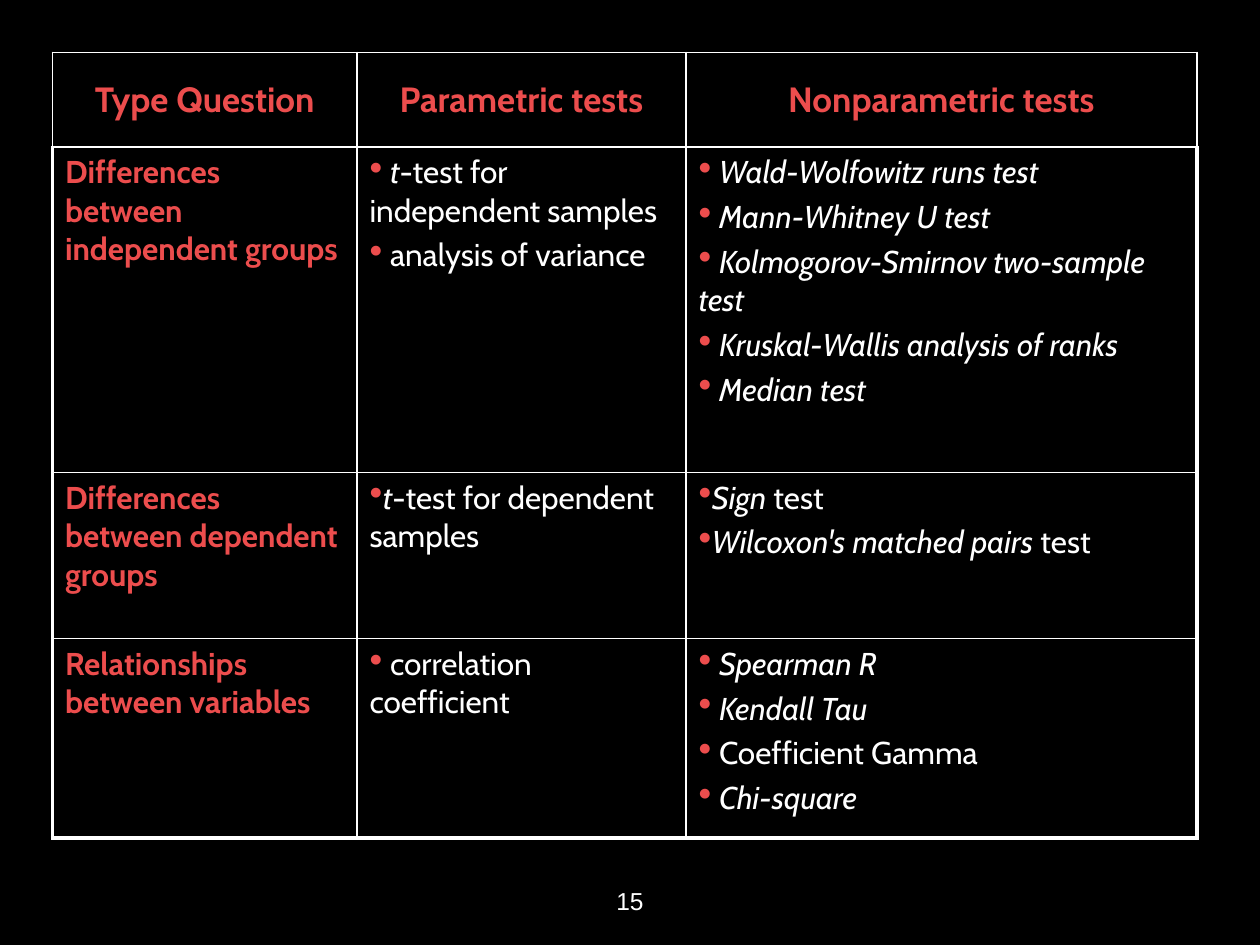
from lxml import etree
from pptx import Presentation
from pptx.dml.color import RGBColor
from pptx.enum.text import MSO_ANCHOR, PP_ALIGN
from pptx.oxml.ns import qn
from pptx.util import Pt

CENTER, LEFT = PP_ALIGN.CENTER, PP_ALIGN.LEFT
MIDDLE, TOP = MSO_ANCHOR.MIDDLE, MSO_ANCHOR.TOP
BLACK, WHITE, RED = "000000", "FFFFFF", "EC4D4D"
THIN, THICK = 1, 2.25
COLUMN_WIDTHS = [174, 188, 292]
ROW_HEIGHTS = [54, 186, 95, 114]
HEADERS = ["Type Question", "Parametric tests", "Nonparametric tests"]
# Each bullet is a list of (text, italic) spans.
QUESTIONS = [
    ("Differences between independent groups",
     [[(" t", True), ("-test for independent samples", False)],
      [(" analysis of variance", False)]],
     [[(" Wald-Wolfowitz runs test", True)],
      [(" Mann-Whitney U test", True)],
      [(" Kolmogorov-Smirnov two-sample test", True)],
      [(" Kruskal-Wallis analysis of ranks", True)],
      [(" Median test", True)]]),
    ("Differences between dependent groups",
     [[("t", True), ("-test for dependent samples", False)]],
     [[("Sign", True), (" test", False)],
      [("Wilcoxon's matched pairs", True), (" test", False)]]),
    ("Relationships between variables",
     [[(" correlation coefficient", False)]],
     [[(" Spearman R", True)],
      [(" Kendall Tau", True)],
      [(" Coefficient Gamma", False)],
      [(" Chi-square", True)]]),
]


def color(value):
    return RGBColor.from_string(value)


class SlideWriter:
    """Holds the style and the current slide, and adds elements to it."""

    def __init__(self, slide, font="Cabin", size=18):
        self.slide, self.font, self.size = slide, font, size
        fill = slide.background.fill
        fill.solid()
        fill.fore_color.rgb = color(BLACK)

    def span(self, para, text, ink=WHITE, size=None, font=None, bold=False, italic=False):
        span = para.add_run()
        span.text = text
        span.font.name = font or self.font
        span.font.size = Pt(size or self.size)
        span.font.bold, span.font.italic = bold, italic
        span.font.color.rgb = color(ink)

    def bullet(self, para):
        properties = para._p.get_or_add_pPr()
        properties.set("marL", "0")
        properties.set("indent", "0")
        tint = etree.SubElement(properties, qn("a:buClr"))
        etree.SubElement(tint, qn("a:srgbClr"), val=RED)
        etree.SubElement(properties, qn("a:buSzPct"), val="120000")
        etree.SubElement(properties, qn("a:buChar"), char="•")

    def bullets(self, cell, items):
        for index, spans in enumerate(items):
            frame = cell.text_frame
            para = frame.add_paragraph() if index else frame.paragraphs[0]
            self.bullet(para)
            if index:
                para.space_before = Pt(3.6)
            for text, italic in spans:
                self.span(para, text, italic=italic)

    def heading(self, cell, text, size=None, align=LEFT, anchor=TOP):
        cell.vertical_anchor = anchor
        para = cell.text_frame.paragraphs[0]
        para.alignment = align
        self.span(para, text, RED, size, bold=True)

    def borders(self, cell, widths):
        properties = cell._tc.get_or_add_tcPr()
        for index, (side, width) in enumerate(zip("LRTB", widths)):
            line = etree.Element(qn(f"a:ln{side}"), w=str(Pt(width)))
            fill = etree.SubElement(line, qn("a:solidFill"))
            etree.SubElement(fill, qn("a:srgbClr"), val=WHITE)
            properties.insert(index, line)

    def table(self, left, top, widths, heights):
        frame = self.slide.shapes.add_table(
            len(heights), len(widths), Pt(left), Pt(top), Pt(sum(widths)), Pt(sum(heights)))
        table = frame.table
        table.first_row = table.horz_banding = False
        for column, width in zip(table.columns, widths):
            column.width = Pt(width)
        last_row, last_column = len(heights) - 1, len(widths) - 1
        for r, height in enumerate(heights):
            table.rows[r].height = Pt(height)
            for c in range(len(widths)):
                cell = table.cell(r, c)
                cell.fill.background()
                thick = (r and c == 0, r and c == last_column, False, r == last_row)
                self.borders(cell, [THICK if side else THIN for side in thick])
        return table

    def label(self, left, top, width, height, text, size, font):
        box = self.slide.shapes.add_textbox(Pt(left), Pt(top), Pt(width), Pt(height))
        box.text_frame.word_wrap = True
        box.text_frame.vertical_anchor = MIDDLE
        para = box.text_frame.paragraphs[0]
        para.alignment = CENTER
        self.span(para, text, size=size, font=font)


def main():
    deck = Presentation()
    deck.slide_width, deck.slide_height = Pt(720), Pt(540)
    page = SlideWriter(deck.slides.add_slide(deck.slide_layouts[6]))
    table = page.table(30, 30, COLUMN_WIDTHS, ROW_HEIGHTS)
    for column, text in enumerate(HEADERS):
        page.heading(table.cell(0, column), text, 20, CENTER, MIDDLE)
    for row, (question, parametric, nonparametric) in enumerate(QUESTIONS, 1):
        page.heading(table.cell(row, 0), question)
        page.bullets(table.cell(row, 1), parametric)
        page.bullets(table.cell(row, 2), nonparametric)
    page.label(333, 500.4, 54, 28.8, "15", 14, "Arial")
    deck.save("out.pptx")


if __name__ == "__main__":
    main()
